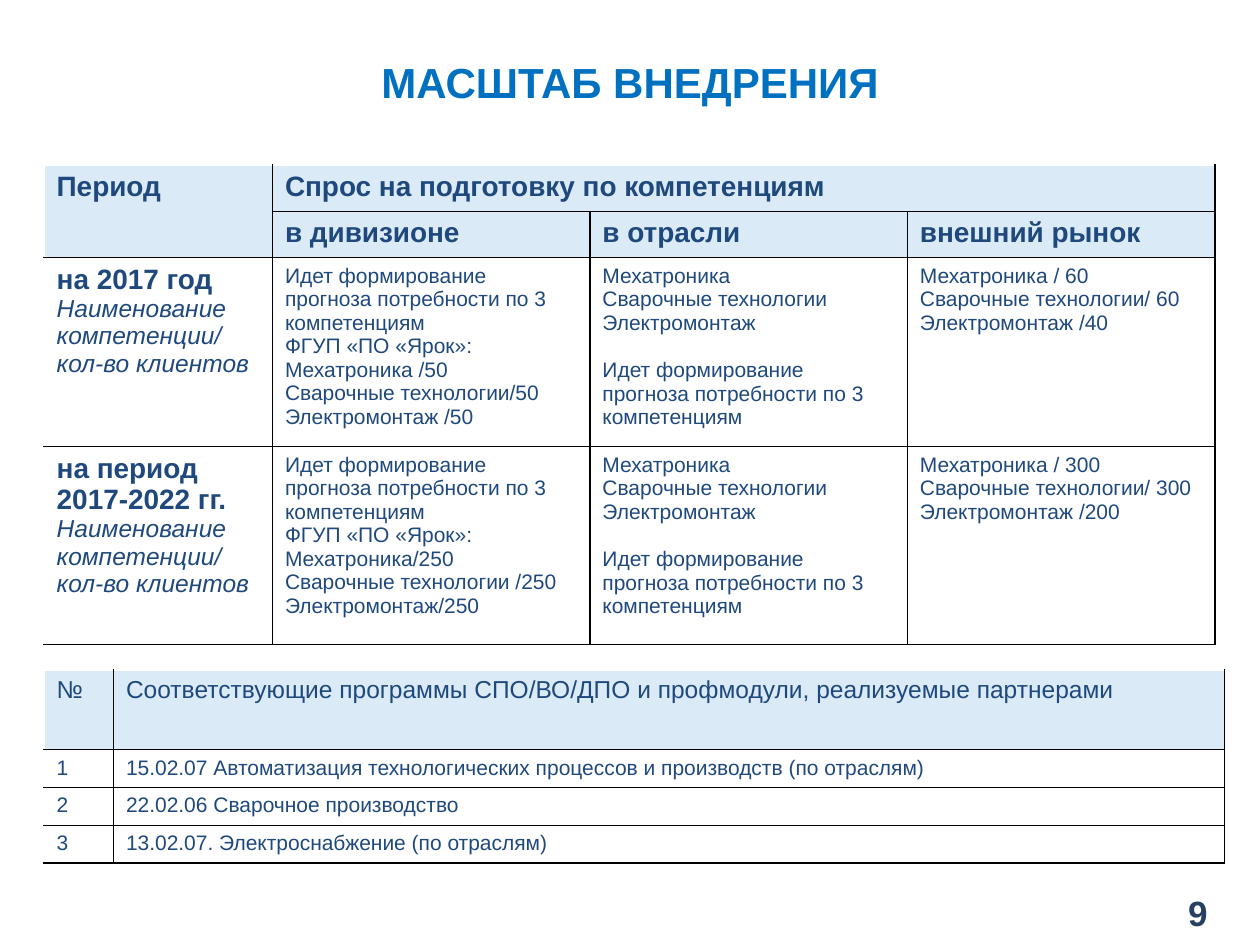
import pptx
import pptx.util
import pptx.dml.color
import pptx.enum.text
import pptx.oxml
import lxml.etree

Pt = pptx.util.Pt
BLUE, PALE = "1F497D", "DAEAF6"
HEAD = (16, True, False)
NOTE = (14, False, True)
LEAD = (14, False, False)
BODY = (12, False, False)


def color(code):
    return pptx.dml.color.RGBColor.from_string(code)


def write(frame, lines, style, code=BLUE):
    """Fill a text frame; a line may be a (text, style, gap) tuple."""
    frame.word_wrap = True
    for i, line in enumerate(lines):
        text, look, gap = line if isinstance(line, tuple) else (line, style, 0)
        para = frame.paragraphs[0] if i == 0 else frame.add_paragraph()
        para.text = text
        if gap:
            para.space_before = Pt(gap)
        font = para.font
        font.name = "Arial"
        font.size, font.bold, font.italic = Pt(look[0]), look[1], look[2]
        font.color.rgb = color(code)


deck = pptx.Presentation()
deck.slide_width, deck.slide_height = Pt(720), Pt(540)
slide = deck.slides.add_slide(deck.slide_layouts[6])

# Title and page number
for text, box, size, code in [
    ("МАСШТАБ ВНЕДРЕНИЯ", (36, 21.6, 648, 49.7), 24, "0070C0"),
    ("9", (671.8, 505.4, 38.9, 31.7), 20, "254061"),
]:
    frame = slide.shapes.add_textbox(*map(Pt, box)).text_frame
    frame.vertical_anchor = pptx.enum.text.MSO_ANCHOR.MIDDLE
    write(frame, [text], (size, True, False), code)
    if size == 24:
        frame.paragraphs[0].alignment = pptx.enum.text.PP_ALIGN.CENTER

# Demand rows: each period with its client counts
term = ["Наименование компетенции/", "кол-во клиентов"]
skills = ["Мехатроника", "Сварочные технологии", "Электромонтаж"]
plan = "Идет формирование прогноза потребности по 3 компетенциям"
plant = "ФГУП «ПО «Ярок»:"
demand = []
for span, inner, outer in [
    ("на 2017 год", (" /50", "/50", " /50"), (" / 60", "/ 60", " /40")),
    ("на период 2017-2022 гг.", ("/250", " /250", "/250"),
     (" / 300", "/ 300", " /200")),
]:
    demand.append([
        [(span, HEAD, 0)] + [(text, NOTE, 0) for text in term],
        [plan, plant] + [a + b for a, b in zip(skills, inner)],
        skills + [(plan, BODY, 13.8)],
        [a + b for a, b in zip(skills, outer)],
    ])

# Tables: place, column widths, row heights, header rows, header style, cells
tables = [
    ((25.2, 383), (39.6, 635), (45.4, 21.6, 21.6, 21.6), 1, LEAD, [
        [["№"], ["Соответствующие программы СПО/ВО/ДПО и профмодули, "
                 "реализуемые партнерами"]],
        [["1"], ["15.02.07 Автоматизация технологических процессов и "
                 "производств (по отраслям)"]],
        [["2"], ["22.02.06 Сварочное производство"]],
        [["3"], ["13.02.07. Электроснабжение (по отраслям)"]],
    ]),
    ((25.2, 94.4), (130.5, 181.4, 181.4, 175.7), (26.4, 26.4, 93.6, 113), 2,
     HEAD, [
        [["Период"], ["Спрос на подготовку по компетенциям"], [], []],
        [[], ["в дивизионе"], ["в отрасли"], ["внешний рынок"]],
        *demand,
    ]),
]

for spot, cols, rows, heads, style, cells in tables:
    grid = slide.shapes.add_table(
        len(rows), len(cols), Pt(spot[0]), Pt(spot[1]),
        Pt(sum(cols)), Pt(sum(rows))).table
    grid.first_row = grid.horz_banding = False
    for c, width in enumerate(cols):
        grid.columns[c].width = Pt(width)
    for r, height in enumerate(rows):
        grid.rows[r].height = Pt(height)
        for c in range(len(cols)):
            cell = grid.cell(r, c)
            write(cell.text_frame, cells[r][c], style if r < heads else BODY)
            # Borders: white on the left and top edges, black elsewhere
            props = cell._tc.get_or_add_tcPr()
            for side in "LRTB":
                edge = (side == "L" and c == 0) or (side == "T" and r == 0)
                line = lxml.etree.SubElement(
                    props, pptx.oxml.ns.qn("a:ln" + side), w=str(Pt(1)))
                fill = lxml.etree.SubElement(
                    line, pptx.oxml.ns.qn("a:solidFill"))
                lxml.etree.SubElement(
                    fill, pptx.oxml.ns.qn("a:srgbClr"),
                    val="FFFFFF" if edge else "000000")
            if r < heads:
                cell.fill.solid()
                cell.fill.fore_color.rgb = color(PALE)
            else:
                cell.fill.background()
    # Header spans of the demand table
    if heads == 2:
        grid.cell(0, 0).merge(grid.cell(1, 0))
        grid.cell(0, 1).merge(grid.cell(0, 3))

deck.save("out.pptx")
